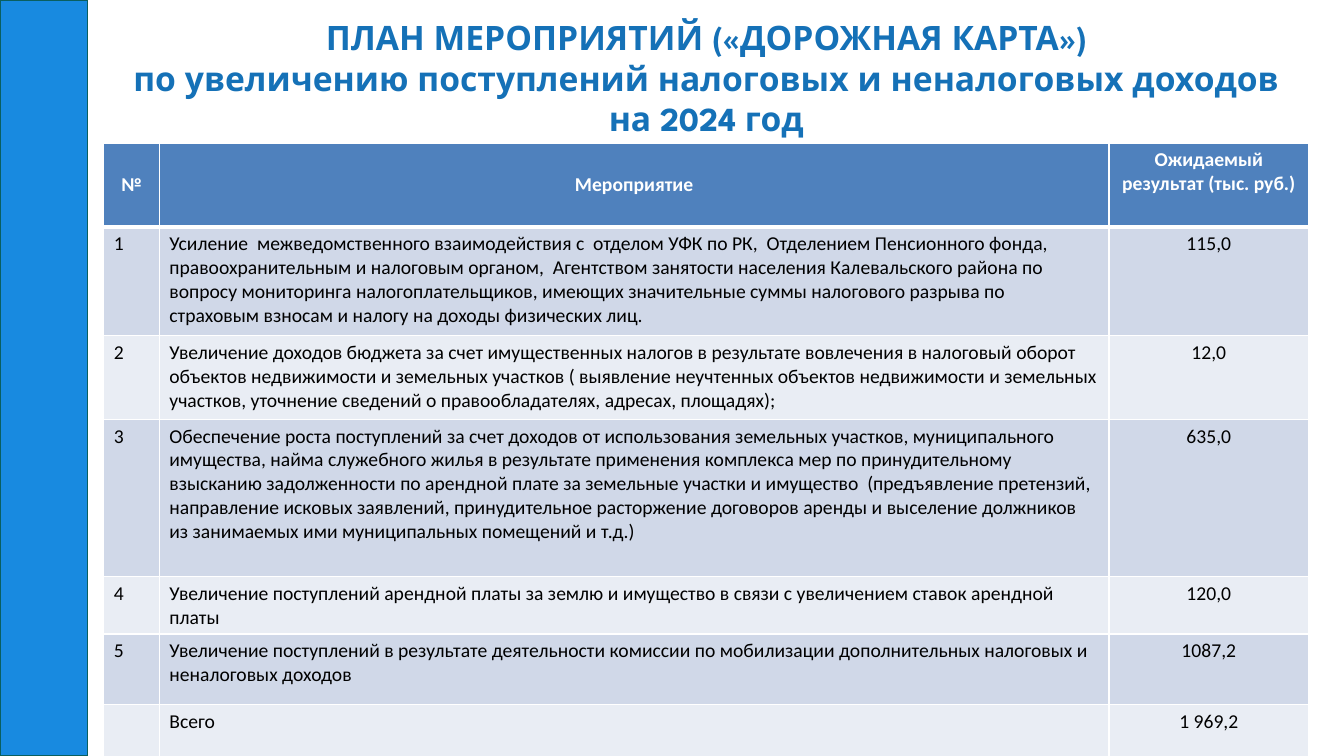
from lxml.etree import SubElement
from pptx import Presentation
from pptx.dml.color import RGBColor
from pptx.enum.shapes import MSO_SHAPE
from pptx.enum.text import MSO_ANCHOR, PP_ALIGN
from pptx.oxml.ns import qn
from pptx.util import Inches, Pt

COLORS = {
    "bar": "188AE0", "bar_edge": "0A5F5F", "title": "1571B7", "header": "4F81BD",
    "odd": "D0D8E8", "even": "E9EDF4", "white": "FFFFFF", "ink": "000000",
}
TITLE_FONT = {"name": "League Spartan", "size": Pt(24), "bold": True}
HEADER_FONT = {"name": "Calibri", "size": Pt(14), "bold": True}
BODY_FONT = HEADER_FONT | {"bold": False}

COLUMNS = [0.55, 9.42, 1.98]
ROWS = [0.83, 1.08, 0.83, 1.56, 0.57, 0.7, 0.7]
ALIGNMENTS = [PP_ALIGN.LEFT, PP_ALIGN.LEFT, PP_ALIGN.CENTER]

TITLE = (
    "ПЛАН МЕРОПРИЯТИЙ («ДОРОЖНАЯ КАРТА»)\v"
    "по увеличению поступлений налоговых и неналоговых доходов\v"
    "на 2024 год"
)
MEASURES = [
    ("№", "Мероприятие", "Ожидаемый результат (тыс. руб.)"),
    ("1", "Усиление  межведомственного взаимодействия с  отделом УФК по РК,  Отделением "
          "Пенсионного фонда, правоохранительным и налоговым органом,  Агентством занятости "
          "населения Калевальского района по вопросу мониторинга налогоплательщиков, имеющих "
          "значительные суммы налогового разрыва по страховым взносам и налогу на доходы "
          "физических лиц.", "115,0"),
    ("2", "Увеличение доходов бюджета за счет имущественных налогов в результате вовлечения "
          "в налоговый оборот объектов недвижимости и земельных участков ( выявление "
          "неучтенных объектов недвижимости и земельных участков, уточнение сведений о "
          "правообладателях, адресах, площадях);", "12,0"),
    ("3", "Обеспечение роста поступлений за счет доходов от использования земельных участков, "
          "муниципального имущества, найма служебного жилья в результате применения комплекса "
          "мер по принудительному взысканию задолженности по арендной плате за земельные "
          "участки и имущество  (предъявление претензий,  направление исковых заявлений, "
          "принудительное расторжение договоров аренды и выселение должников из занимаемых "
          "ими муниципальных помещений и т.д.)", "635,0"),
    ("4", "Увеличение поступлений арендной платы за землю и имущество в связи с увеличением "
          "ставок арендной платы", "120,0"),
    ("5", "Увеличение поступлений в результате деятельности комиссии по мобилизации "
          "дополнительных налоговых и неналоговых доходов", "1087,2"),
    ("", "Всего", "1 969,2"),
]


def style_paragraph(paragraph, alignment, font_values, color):
    paragraph.alignment = alignment
    for attribute, value in font_values.items():
        setattr(paragraph.font, attribute, value)
    paragraph.font.color.rgb = RGBColor.from_string(COLORS[color])


def add_border(cell, side, points):
    line = SubElement(cell._tc.get_or_add_tcPr(), qn(f"a:ln{side}"), w=str(Pt(points)))
    SubElement(SubElement(line, qn("a:solidFill")), qn("a:srgbClr"), val=COLORS["white"])


prs = Presentation()
prs.slide_width, prs.slide_height = Inches(13.33), Inches(7.5)
slide = prs.slides.add_slide(prs.slide_layouts[6])
content_left, content_width = Inches(1.03), Inches(sum(COLUMNS))

# Side bar
side_bar = slide.shapes.add_shape(MSO_SHAPE.RECTANGLE, 0, 0, Inches(0.87), prs.slide_height)
side_bar.shadow.inherit = False
side_bar.fill.solid()
side_bar.fill.fore_color.rgb = RGBColor.from_string(COLORS["bar"])
side_bar.line.color.rgb = RGBColor.from_string(COLORS["bar_edge"])
side_bar.line.width = Pt(1)

# Title
title = slide.shapes.add_textbox(content_left, Inches(0.17), content_width, Inches(1.25)).text_frame
for attribute in ("margin_left", "margin_top", "margin_right", "margin_bottom"):
    setattr(title, attribute, 0)
title.word_wrap = True
title.paragraphs[0].text = TITLE
style_paragraph(title.paragraphs[0], PP_ALIGN.CENTER, TITLE_FONT, "title")

# Table of measures
measures = slide.shapes.add_table(
    len(ROWS), len(COLUMNS), content_left, Inches(1.42), content_width, Inches(sum(ROWS))
).table
for column, width in zip(measures.columns, COLUMNS):
    column.width = Inches(width)
for row, height in zip(measures.rows, ROWS):
    row.height = Inches(height)

for r, measure in enumerate(MEASURES):
    is_header = r == 0
    band = "header" if is_header else "odd" if r % 2 else "even"
    for c, text in enumerate(measure):
        cell = measures.cell(r, c)
        for side in "LRTB":
            under_header = (r, side) in ((0, "B"), (1, "T"))
            add_border(cell, side, 3 if under_header else 1)
        cell.fill.solid()
        cell.fill.fore_color.rgb = RGBColor.from_string(COLORS[band])
        cell.vertical_anchor = MSO_ANCHOR.MIDDLE if is_header and c < 2 else MSO_ANCHOR.TOP
        cell.text = text
        style_paragraph(
            cell.text_frame.paragraphs[0],
            PP_ALIGN.CENTER if is_header else ALIGNMENTS[c],
            HEADER_FONT if is_header else BODY_FONT,
            "white" if is_header else "ink",
        )

prs.save("out.pptx")
